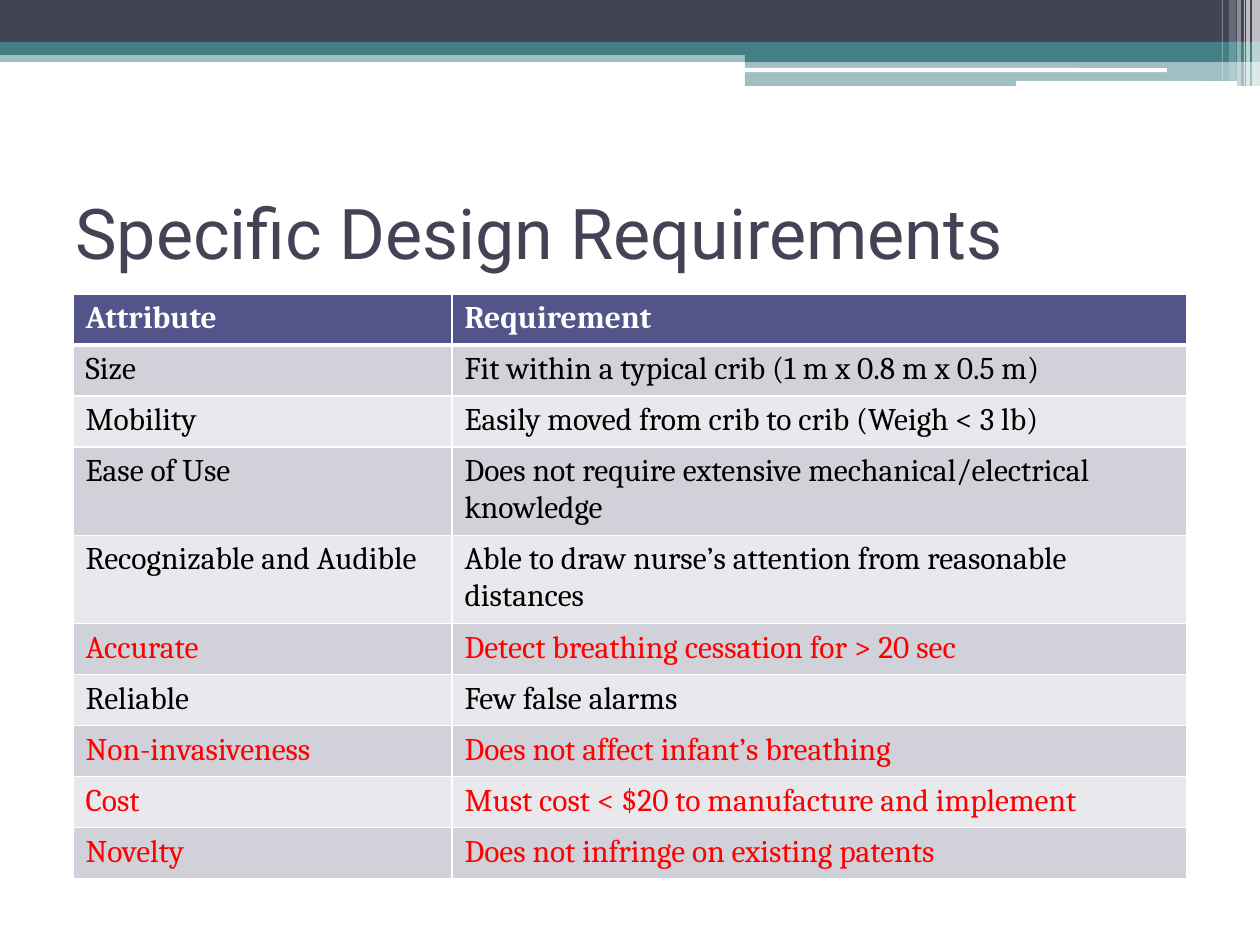
from lxml import etree
from pptx import Presentation
from pptx.dml.color import RGBColor
from pptx.enum.shapes import MSO_SHAPE
from pptx.enum.text import MSO_ANCHOR
from pptx.oxml.ns import qn
from pptx.util import Pt

RECT = MSO_SHAPE.RECTANGLE
ROUND = MSO_SHAPE.ROUNDED_RECTANGLE
MIDDLE = MSO_ANCHOR.MIDDLE

COLORS = {
    "white": "FFFFFF", "navy": "424456", "teal": "438086",
    "header": "53548A", "odd": "D1D1DA", "even": "E9E9ED",
    "black": "000000", "red": "FF0000",
}

TITLE = "Specific Design Requirements"
HEADER = ("Attribute", "Requirement")
REQUIREMENTS = [
    ("Size", "Fit within a typical crib (1 m x 0.8 m x 0.5 m)"),
    ("Mobility", "Easily moved from crib to crib (Weigh < 3 lb)"),
    ("Ease of Use", "Does not require extensive mechanical/electrical knowledge"),
    ("Recognizable and Audible", "Able to draw nurse’s attention from reasonable distances"),
    ("Accurate", "Detect breathing cessation for > 20 sec"),
    ("Reliable", "Few false alarms"),
    ("Non-invasiveness", "Does not affect infant’s breathing"),
    ("Cost", "Must cost < $20 to manufacture and implement"),
    ("Novelty", "Does not infringe on existing patents"),
]
KEY_ATTRIBUTES = {"Accurate", "Non-invasiveness", "Cost", "Novelty"}
TWO_LINE_ATTRIBUTES = {"Ease of Use", "Recognizable and Audible"}

BANDS = [
    (RECT, 0, 50, 1260, 12, "teal", 50),
    (RECT, 0, 0, 1260, 43, "navy", 100),
    (RECT, 0, 42, 1260, 13, "teal", 100),
    (RECT, 745, 49, 515, 13, "teal", 100),
    (RECT, 745, 61, 515, 25, "teal", 50),
    (ROUND, 745, 68, 422, 4, "white", 100),
    (ROUND, 1016, 81, 221, 5, "white", 100),
]
STRIPES = [
    (1252, 8, 86, 65), (1246, 4, 86, 65), (1244, 1, 86, 60),
    (1237, 4, 86, 40), (1229, 7, 81, 20), (1222, 1, 81, 30),
]
COLUMN_WIDTHS = (379, 735)
LINE_ROW, TWO_LINE_ROW = 51, 85


def px(length):
    return round(length * 914400 / 126)


def rgb(name):
    return RGBColor.from_string(COLORS[name])


def add_band(slide, kind, left, top, width, height, color, opacity):
    band = slide.shapes.add_shape(kind, px(left), px(top), px(width), px(height))
    band.shadow.inherit = False
    band.line.fill.background()
    band.fill.solid()
    band.fill.fore_color.rgb = rgb(color)
    if opacity < 100:
        tint = band.fill._xPr.find(qn("a:solidFill"))[0]
        etree.SubElement(tint, qn("a:alpha"), val=str(opacity * 1000))


def write(frame, text, font, size, color, bold=False):
    run = frame.paragraphs[0].add_run()
    run.text = text
    formats = {"name": font, "size": Pt(size), "bold": bold}
    for attribute, value in formats.items():
        setattr(run.font, attribute, value)
    run.font.color.rgb = rgb(color)


def add_borders(cell, top, bottom):
    properties = cell._tc.get_or_add_tcPr()
    for side, points in (("L", 1), ("R", 1), ("T", top), ("B", bottom)):
        border = etree.SubElement(properties, qn(f"a:ln{side}"), w=str(Pt(points)))
        fill = etree.SubElement(border, qn("a:solidFill"))
        etree.SubElement(fill, qn("a:srgbClr"), val=COLORS["white"])


def add_requirements(slide):
    rows = [HEADER] + REQUIREMENTS
    heights = [TWO_LINE_ROW if row[0] in TWO_LINE_ATTRIBUTES else LINE_ROW for row in rows]
    table = slide.shapes.add_table(
        len(rows), len(HEADER), px(73), px(294), px(sum(COLUMN_WIDTHS)), px(sum(heights))
    ).table
    for column, width in zip(table.columns, COLUMN_WIDTHS):
        column.width = px(width)
    for r, (row, height) in enumerate(zip(rows, heights)):
        table.rows[r].height = px(height)
        is_header = r == 0
        if is_header:
            fill, color = "header", "white"
        else:
            fill = "odd" if r % 2 else "even"
            color = "red" if row[0] in KEY_ATTRIBUTES else "black"
        for c, text in enumerate(row):
            cell = table.cell(r, c)
            add_borders(cell, 3 if r == 1 else 1, 3 if is_header else 1)
            cell.fill.solid()
            cell.fill.fore_color.rgb = rgb(fill)
            write(cell.text_frame, text, "Cambria", 18, color, is_header)


def main():
    deck = Presentation()
    deck.slide_width, deck.slide_height = px(1260), px(945)
    slide = deck.slides.add_slide(deck.slide_layouts[6])
    for band in BANDS:
        add_band(slide, *band)
    for left, width, height, opacity in STRIPES:
        add_band(slide, RECT, left, 0, width, height, "white", opacity)
    title = slide.shapes.add_textbox(px(63), px(158), px(1134), px(147)).text_frame
    title.word_wrap = True
    title.vertical_anchor = MIDDLE
    write(title, TITLE, "Roboto", 40, "navy")
    add_requirements(slide)
    deck.save("out.pptx")


if __name__ == "__main__":
    main()
